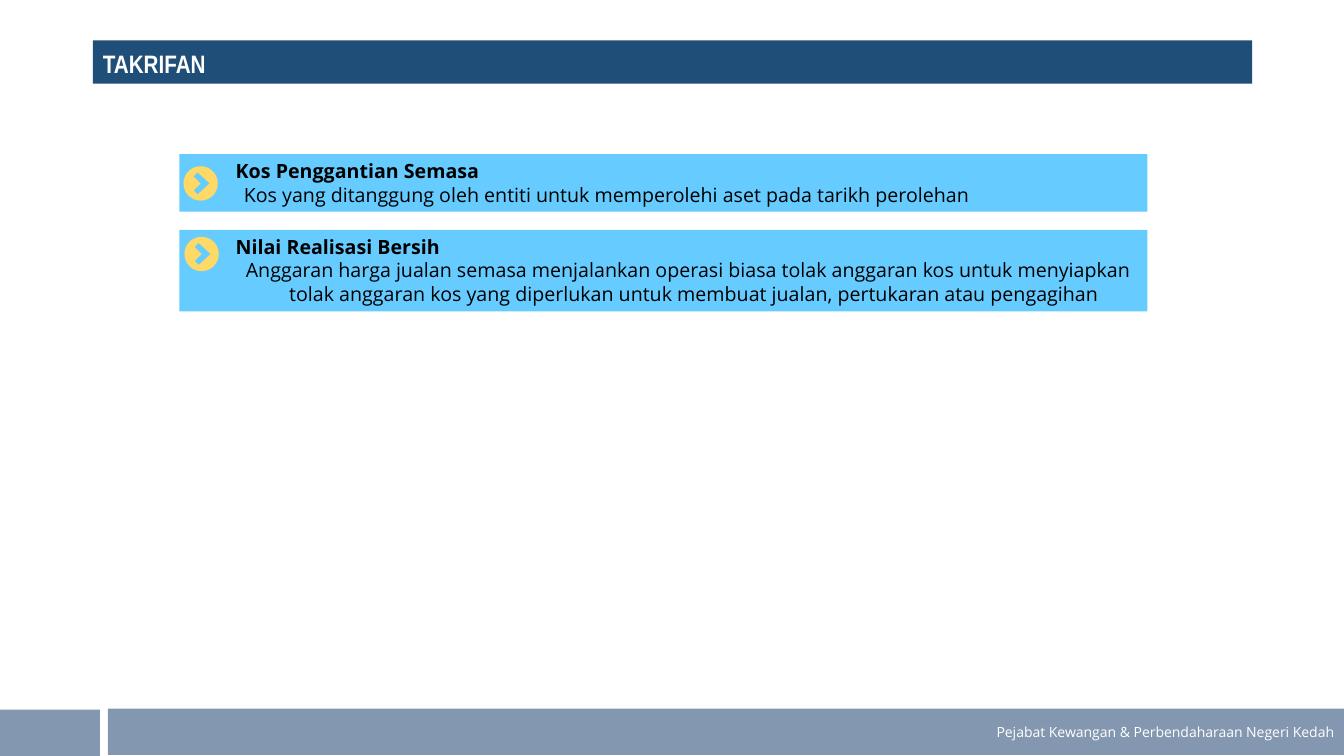
import math
from dataclasses import dataclass

from pptx import Presentation
from pptx import util as u
from pptx.dml import color
from pptx.enum import shapes, text


@dataclass(frozen=True)
class Theme:
    navy: str = "1F4E79"
    sky: str = "66CCFF"
    slate: str = "8497B0"
    gold: str = "FFD966"
    white: str = "FFFFFF"
    black: str = "000000"
    heading_font: str = "Arial Narrow"
    body_font: str = "Open Sans"
    title_size: int = 18
    body_size: int = 14
    footer_size: int = 10


theme = Theme()


def paint(shape, fill):
    shape.fill.solid()
    shape.fill.fore_color.rgb = color.RGBColor.from_string(fill)
    shape.line.fill.background()
    shape.shadow.inherit = False


def write(para, words, ink, layout, **font):
    span = para.add_run()
    span.text = words
    for name, value in font.items():
        setattr(span.font, name, value)
    span.font.color.rgb = color.RGBColor.from_string(ink)
    for name, value in layout.items():
        setattr(para, name, value)


deck = Presentation()
deck.slide_width, deck.slide_height = u.Inches(13.33), u.Inches(7.5)
page = deck.slides.add_slide(deck.slide_layouts[5])

title = page.shapes.title
title.left, title.top = u.Inches(0.92), u.Inches(0.4)
title.width, title.height = u.Inches(11.5), u.Inches(0.43)
paint(title, theme.navy)
frame = title.text_frame
frame.auto_size = text.MSO_AUTO_SIZE.NONE
frame.vertical_anchor = text.MSO_ANCHOR.BOTTOM
write(frame.paragraphs[0], "TAKRIFAN", theme.white,
      {"alignment": text.PP_ALIGN.LEFT, "line_spacing": 0.9},
      name=theme.heading_font, size=u.Pt(theme.title_size), bold=True)

definitions = [
    {"top": 1.53, "height": 0.57, "badge": (1.99, 1.82), "margin": 0.54, "indent": 0,
     "term": "Kos Penggantian Semasa",
     "meaning": "Kos yang ditanggung oleh entiti untuk memperolehi aset pada tarikh perolehan"},
    {"top": 2.28, "height": 0.81, "badge": (2.0, 2.52), "margin": 0.99, "indent": -0.43,
     "term": "Nilai Realisasi Bersih",
     "meaning": "Anggaran harga jualan semasa menjalankan operasi biasa tolak anggaran kos "
                "untuk menyiapkan tolak anggaran kos yang diperlukan untuk membuat jualan, "
                "pertukaran atau pengagihan"},
]
chevron = [(-0.03, 0.11), (0.09, 0), (-0.03, -0.11), (-0.07, -0.07), (0, 0), (-0.07, 0.07)]
angles = [math.radians(step * 6) for step in range(60)]
circle = [(0.17 * math.cos(angle), 0.17 * math.sin(angle)) for angle in angles]

for item in definitions:
    box = page.shapes.add_shape(shapes.MSO_SHAPE.RECTANGLE, u.Inches(1.78), u.Inches(item["top"]),
                                u.Inches(9.6), u.Inches(item["height"]))
    paint(box, theme.sky)
    frame = box.text_frame
    frame.word_wrap = True
    frame.auto_size = text.MSO_AUTO_SIZE.SHAPE_TO_FIT_TEXT
    frame.vertical_anchor = text.MSO_ANCHOR.TOP
    lines = [(frame.paragraphs[0], item["term"], True, 0.46, 0),
             (frame.add_paragraph(), item["meaning"], False, item["margin"], item["indent"])]
    for para, words, bold, margin, indent in lines:
        write(para, words, theme.black, {"alignment": text.PP_ALIGN.LEFT},
              name=theme.body_font, size=u.Pt(theme.body_size), bold=bold)
        properties = para._p.get_or_add_pPr()
        properties.set("marL", str(u.Inches(margin)))
        properties.set("indent", str(u.Inches(indent)))

    center_x, center_y = item["badge"]
    outlines = [[(u.Inches(center_x + x), u.Inches(center_y + y)) for x, y in outline]
                for outline in (circle, chevron)]
    builder = page.shapes.build_freeform(*outlines[0][0])
    builder.add_line_segments(outlines[0][1:], close=True)
    builder.move_to(*outlines[1][0])
    builder.add_line_segments(outlines[1][1:], close=True)
    paint(builder.convert_to_shape(), theme.gold)

for left, top, width in [(0, 7.04, 0.99), (1.07, 7.03, 12.26)]:
    footer = page.shapes.add_shape(shapes.MSO_SHAPE.RECTANGLE, u.Inches(left), u.Inches(top),
                                   u.Inches(width), u.Inches(0.46))
    paint(footer, theme.slate)

footer.text_frame.vertical_anchor = text.MSO_ANCHOR.MIDDLE
write(footer.text_frame.paragraphs[0], "Pejabat Kewangan & Perbendaharaan Negeri Kedah",
      theme.white, {"alignment": text.PP_ALIGN.RIGHT},
      name=theme.body_font, size=u.Pt(theme.footer_size))

deck.save("out.pptx")
